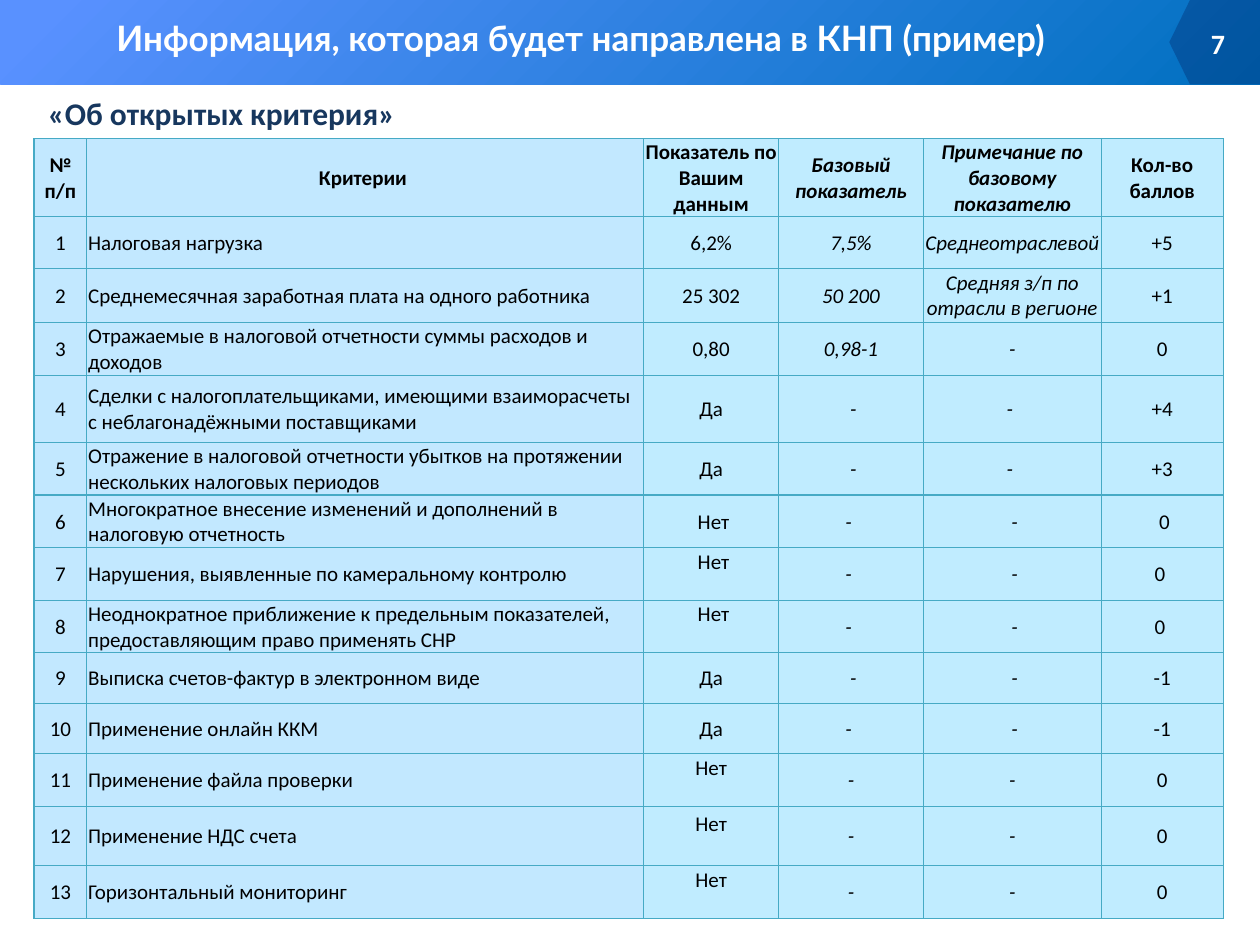
import pptx
import pptx.util
import pptx.dml.color
import pptx.enum.shapes
import pptx.enum.text
import pptx.oxml
import pptx.oxml.ns

Inches = pptx.util.Inches
Pt = pptx.util.Pt
RGBColor = pptx.dml.color.RGBColor
Shape = pptx.enum.shapes.MSO_SHAPE
Align = pptx.enum.text.PP_ALIGN
Anchor = pptx.enum.text.MSO_ANCHOR
qn = pptx.oxml.ns.qn

BLACK = RGBColor(0x00, 0x00, 0x00)
WHITE = RGBColor(0xFF, 0xFF, 0xFF)
NAVY = RGBColor(0x00, 0x20, 0x60)
INK = RGBColor(0x17, 0x37, 0x5E)
SKY = RGBColor(0x59, 0x91, 0xFF)
BLUE = RGBColor(0x00, 0x70, 0xC0)
TEAL = RGBColor(0x46, 0xAA, 0xC5)
PALE = RGBColor(0xC2, 0xE8, 0xFF)
AQUA = RGBColor(0xC0, 0xEC, 0xFF)

TITLE = "Информация, которая будет направлена в КНП (пример)"
TOPIC = "«Об открытых критерия»"
PAGE = "7"
HEAD = ("№ п/п", "Критерии ", "Показатель по Вашим данным",
        "Базовый показатель", "Примечание по базовому показателю", "Кол-во баллов")
ITEMS = [
    ("Налоговая нагрузка", "6,2%", "7,5%", "Среднеотраслевой", "+5"),
    ("Среднемесячная заработная плата на одного работника",
     "25 302", "50 200", "Средняя з/п по отрасли в регионе", "+1"),
    ("Отражаемые в налоговой отчетности суммы расходов и доходов",
     "0,80", "0,98-1", "-", "0"),
    ("Сделки с налогоплательщиками, имеющими взаиморасчеты с неблагонадёжными поставщиками",
     "Да", " -", "- ", "+4"),
    ("Отражение в налоговой отчетности убытков на протяжении нескольких налоговых периодов",
     "Да", " -", "- ", "+3"),
    ("Многократное внесение изменений и дополнений в налоговую отчетность",
     " Нет", "- ", " -", " 0"),
    ("Нарушения, выявленные по камеральному контролю", " Нет", "- ", " -", "0 "),
    ("Неоднократное приближение к предельным показателей, предоставляющим право применять СНР",
     " Нет", "- ", " -", "0 "),
    ("Выписка счетов-фактур в электронном виде", "Да", " -", " -", "-1"),
    ("Применение онлайн ККМ", "Да", "- ", " -", "-1"),
    ("Применение файла проверки", "Нет", "-", "-", "0"),
    ("Применение НДС счета", "Нет", "-", "-", "0"),
    ("Горизонтальный мониторинг", "Нет", "-", "-", "0"),
]
WIDTHS = (0.42, 4.42, 1.07, 1.15, 1.41, 0.97)
HEIGHTS = (0.62, 0.41, 0.43, 0.42, 0.53, 0.42, 0.41,
           0.42, 0.41, 0.4, 0.4, 0.42, 0.47, 0.42)
RAISED = (7, 8, 11, 12, 13)
LINE = 0.2


def write(frame, text, size=12, font="Calibri", color=BLACK,
          bold=False, italic=False, align=Align.CENTER):
    para = frame.paragraphs[0]
    para.alignment = align
    run = para.add_run()
    run.text = text
    run.font.size = Pt(size)
    run.font.name = font
    run.font.color.rgb = color
    run.font.bold = bold
    run.font.italic = italic


def label(slide, box, text, wrap=True, anchor=Anchor.TOP, **form):
    frame = slide.shapes.add_textbox(*map(Inches, box)).text_frame
    frame.word_wrap = wrap
    frame.vertical_anchor = anchor
    write(frame, text, **form)


def block(slide, kind, box):
    shape = slide.shapes.add_shape(kind, *map(Inches, box))
    shape.shadow.inherit = False
    shape.line.fill.background()
    return shape


def border(cell):
    props = cell._tc.get_or_add_tcPr()
    for side in ("a:lnL", "a:lnR", "a:lnT", "a:lnB"):
        line = pptx.oxml.parse_xml(
            f'<{side} xmlns:a="http://schemas.openxmlformats.org/drawingml/2006/main"'
            f' w="{Pt(0.75)}"><a:solidFill><a:srgbClr val="{TEAL}"/></a:solidFill></{side}>')
        props.append(line)


def grid(slide):
    rows = [HEAD] + [(str(n), *item) for n, item in enumerate(ITEMS, 1)]
    table = slide.shapes.add_table(
        len(rows), len(WIDTHS), Inches(0.27), Inches(1.1),
        Inches(sum(WIDTHS)), Inches(sum(HEIGHTS))).table
    table.first_row = False
    table.horz_banding = False
    for col, width in zip(table.columns, WIDTHS):
        col.width = Inches(width)
    for r, texts in enumerate(rows):
        table.rows[r].height = Inches(HEIGHTS[r])
        for c, text in enumerate(texts):
            cell = table.cell(r, c)
            cell.margin_left = cell.margin_right = cell.margin_top = Inches(0.01)
            cell.margin_bottom = Inches(LINE if c == 2 and r in RAISED else 0)
            cell.vertical_anchor = Anchor.MIDDLE
            border(cell)
            cell.fill.solid()
            cell.fill.fore_color.rgb = PALE if c < 2 else AQUA
            write(cell.text_frame, text, bold=r == 0, italic=c in (3, 4),
                  align=Align.LEFT if c == 1 and r else Align.CENTER)


def banner(slide):
    bar = block(slide, Shape.RECTANGLE, (0, 0, 10, 0.67))
    bar.fill.gradient()
    bar.fill.gradient_angle = 315
    for stop, color, place in zip(bar.fill.gradient_stops, (SKY, BLUE), (0.04, 1)):
        stop.color.rgb = color
        stop.position = place

    tag = block(slide, Shape.PENTAGON, (9.28, 0, 0.72, 0.67))
    tag.rotation = 180
    tag.adjustments[0] = 0.245
    tag.fill.solid()
    tag.fill.fore_color.rgb = NAVY
    tint = tag._element.spPr.find(qn("a:solidFill"))[0]
    tint.append(pptx.oxml.parse_xml(
        '<a:alpha xmlns:a="http://schemas.openxmlformats.org/drawingml/2006/main" val="33000"/>'))


def main():
    deck = pptx.Presentation()
    deck.slide_width = Inches(10)
    deck.slide_height = Inches(7.5)
    slide = deck.slides.add_slide(deck.slide_layouts[6])
    grid(slide)
    banner(slide)
    label(slide, (9.28, 0.19, 0.54, 0.3), PAGE, anchor=Anchor.MIDDLE,
          size=16, color=WHITE, bold=True, align=Align.RIGHT)
    label(slide, (0.2, 0.08, 8.82, 0.44), TITLE,
          size=20, font="Lato", color=WHITE, bold=True)
    label(slide, (0.28, 0.7, 2.96, 0.4), TOPIC, wrap=False,
          size=18, color=INK, bold=True)
    deck.save("out.pptx")


if __name__ == "__main__":
    main()
